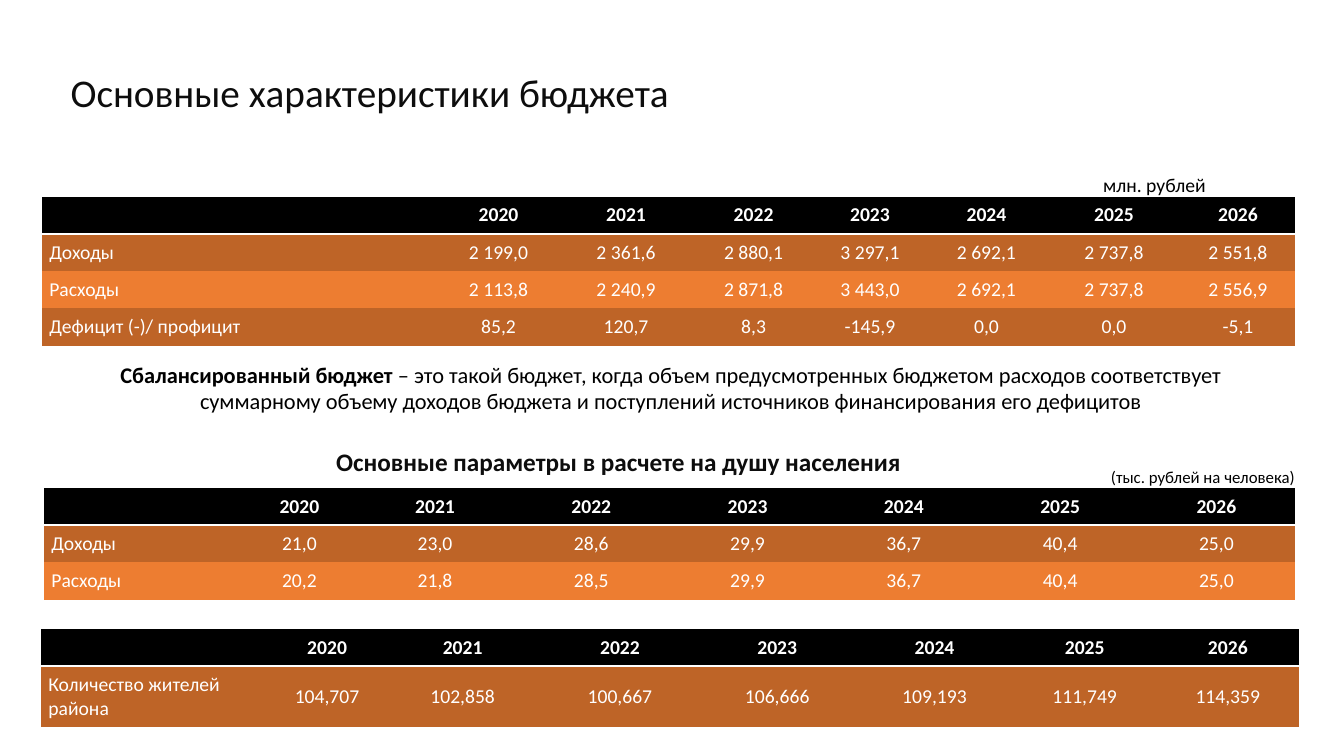
from pptx import Presentation
from pptx.dml.color import RGBColor
from pptx.enum.text import MSO_ANCHOR, PP_ALIGN
from pptx.oxml import parse_xml
from pptx.oxml.ns import nsdecls, qn
from pptx.util import Inches, Pt

INK = {"black": "000000", "soft": "0D0D0D", "white": "FFFFFF",
       "dark": "BE6427", "light": "ED7D31"}
FONT = "Calibri"
PLAIN = "{2D5ABB26-0587-4C30-8999-92F81FD0307C}"
YEARS = [str(year) for year in range(2020, 2027)]


def color(name):
    return RGBColor.from_string(INK[name])


def add_run(para, text, size, ink, bold=False):
    run = para.add_run()
    run.text = text
    run.font.name = FONT
    run.font.size = Pt(size)
    run.font.bold = bold
    run.font.color.rgb = color(ink)


def add_title(slide, box, text):
    title = slide.shapes.title
    title.left, title.top, title.width, title.height = map(Inches, box)
    frame = title.text_frame
    frame.vertical_anchor = MSO_ANCHOR.MIDDLE
    para = frame.paragraphs[0]
    para.alignment = PP_ALIGN.LEFT
    add_run(para, text, 28, "soft")


def add_note(slide, box, runs, size, ink="black", align=PP_ALIGN.CENTER):
    frame = slide.shapes.add_textbox(*map(Inches, box)).text_frame
    frame.word_wrap = True
    para = frame.paragraphs[0]
    para.alignment = align
    for text, bold in runs:
        add_run(para, text, size, ink, bold)


def add_rule(cell):
    line = parse_xml(
        f'<a:lnB {nsdecls("a")} w="{Pt(2)}"><a:solidFill>'
        f'<a:srgbClr val="{INK["white"]}"/></a:solidFill></a:lnB>')
    cell._tc.get_or_add_tcPr().insert(0, line)


def fill_cell(cell, text, row, col):
    cell.margin_left = cell.margin_right = Inches(0.07)
    cell.margin_top = cell.margin_bottom = Inches(0.02)
    cell.vertical_anchor = MSO_ANCHOR.MIDDLE
    cell.fill.solid()
    fill = "black" if row == 0 else "dark" if row % 2 else "light"
    cell.fill.fore_color.rgb = color(fill)
    if row == 0:
        add_rule(cell)
    para = cell.text_frame.paragraphs[0]
    para.alignment = PP_ALIGN.CENTER if col else PP_ALIGN.LEFT
    if text:
        add_run(para, text, 14, "white", row == 0)


def add_grid(slide, left, top, widths, heights, body):
    rows = [["", *YEARS], *body]
    frame = slide.shapes.add_table(
        len(rows), len(widths), Inches(left), Inches(top),
        Inches(sum(widths)), Inches(sum(heights)))
    for style in frame._element.iter(qn("a:tableStyleId")):
        style.text = PLAIN
    table = frame.table
    for col, width in zip(table.columns, widths):
        col.width = Inches(width)
    for row, height in zip(table.rows, heights):
        row.height = Inches(height)
    for r, row in enumerate(rows):
        for c, text in enumerate(row):
            fill_cell(table.cell(r, c), text, r, c)


def add_budget(slide, left, top):
    add_note(slide, (left + 9.92, top - 0.28, 2.22, 0.34),
             [("млн. рублей", False)], 14)
    add_grid(slide, left, top,
             [3.92, 1.21, 1.32, 1.21, 1.1, 1.21, 1.32, 1.14], [0.37] * 4, [
        ["Доходы", "2 199,0", "2 361,6", "2 880,1", "3 297,1",
         "2 692,1", "2 737,8", "2 551,8"],
        ["Расходы", "2 113,8", "2 240,9", "2 871,8", "3 443,0",
         "2 692,1", "2 737,8", "2 556,9"],
        ["Дефицит (-)/ профицит", "85,2", "120,7", "8,3", "-145,9",
         "0,0", "0,0", "-5,1"]])
    add_note(slide, (left + 0.24, top + 1.58, 11.99, 0.64), [
        ("Сбалансированный бюджет ", True),
        ("– это такой бюджет, когда объем предусмотренных бюджетом расходов "
         "соответствует суммарному объему доходов бюджета и поступлений "
         "источников финансирования его дефицитов", False)], 16)


def add_share(slide, left, top):
    add_note(slide, (left - 0.3, top - 0.46, 11.99, 0.4),
             [("Основные параметры в расчете на душу населения", True)],
             18, "soft")
    add_note(slide, (left + 10.48, top - 0.26, 2.29, 0.3),
             [("(тыс. рублей на человека)", False)], 12, align=PP_ALIGN.LEFT)
    add_grid(slide, left, top, [1.96, 1.14] + [1.55] * 6, [0.37] * 3, [
        ["Доходы", "21,0", "23,0", "28,6", "29,9", "36,7", "40,4", "25,0"],
        ["Расходы", "20,2", "21,8", "28,5", "29,9", "36,7", "40,4", "25,0"]])


def add_people(slide, left, top):
    add_grid(slide, left, top, [2.27, 1.13] + [1.56] * 4 + [1.42] * 2,
             [0.37, 0.6], [
        ["Количество жителей района", "104,707", "102,858", "100,667",
         "106,666", "109,193", "111,749", "114,359"]])


def main():
    deck = Presentation()
    deck.slide_width, deck.slide_height = Inches(13.33), Inches(7.5)
    slide = deck.slides.add_slide(deck.slide_layouts[5])
    add_title(slide, (0.6, 0.6, 6.3, 0.62), "Основные характеристики бюджета")
    add_budget(slide, 0.42, 1.95)
    add_share(slide, 0.44, 4.84)
    add_people(slide, 0.41, 6.24)
    deck.save("out.pptx")


if __name__ == "__main__":
    main()
